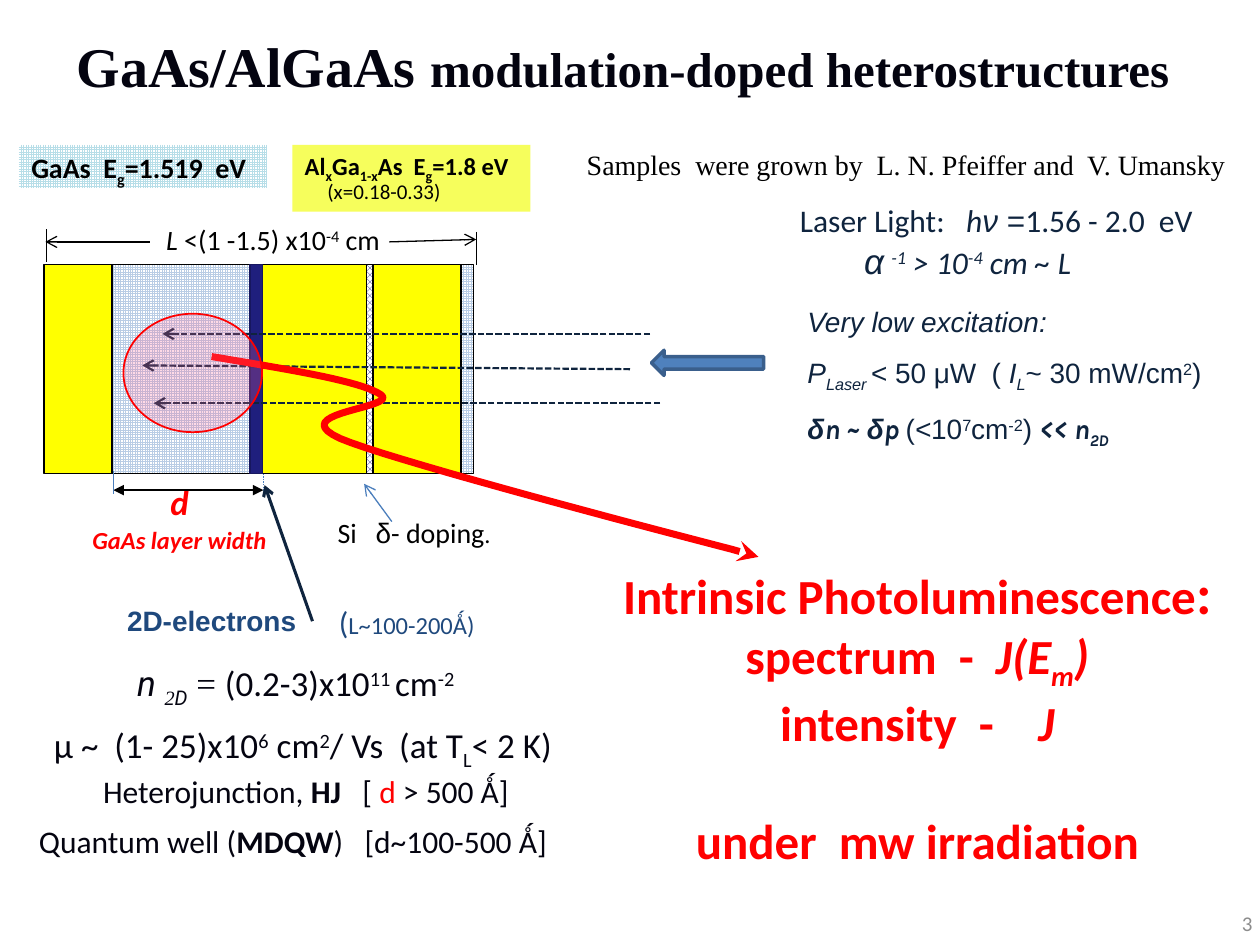
"""Build the slide on GaAs/AlGaAs modulation-doped heterostructures."""
from dataclasses import dataclass
from typing import Optional

import lxml.etree
import pptx
import pptx.dml.color
import pptx.enum.dml
import pptx.enum.shapes
import pptx.enum.text
import pptx.oxml.ns
import pptx.util

Inches, Pt = pptx.util.Inches, pptx.util.Pt
Shape = pptx.enum.shapes.MSO_SHAPE
Pattern = pptx.enum.dml.MSO_PATTERN
Dash = pptx.enum.dml.MSO_LINE
Align = pptx.enum.text.PP_ALIGN
Anchor = pptx.enum.text.MSO_ANCHOR
qn = pptx.oxml.ns.qn

COLORS = {
    "black": "000000", "ink": "040410", "white": "FFFFFF", "navy": "0F243E",
    "blue": "1F497D", "red": "FF0000", "grey": "8C8C8C", "yellow": "FFFF00",
    "lemon": "F6FE5C", "aqua": "B7DEE8", "ice": "B9CDE5", "indigo": "1F1F7D",
    "edge": "17175F", "steel": "4B7EBC", "arrow": "4F81BD",
    "arrow edge": "3A5F8C", "pink": "FF6699",
}
PATTERNS = {
    "aqua grid": (Pattern.SMALL_GRID, "aqua"),
    "ice grid": (Pattern.SMALL_GRID, "ice"),
    "check": (Pattern.LARGE_CHECKER_BOARD, "indigo"),
}
SERIF = "Times New Roman"


@dataclass
class Run:
    text: str
    size: Optional[float] = None
    font: Optional[str] = None
    color: Optional[str] = None
    bold: Optional[bool] = None
    italic: Optional[bool] = None
    base: int = 0


@dataclass
class Para:
    runs: list[Run]
    indent: float = 0
    before: float = 0


@dataclass
class Label:
    x: float
    y: float
    w: float
    h: float
    paras: list[Para]
    size: float
    color: str = "black"
    font: str = "Calibri"
    bold: bool = False
    italic: bool = False
    align: Align = Align.LEFT
    spacing: float | pptx.util.Length = 1.0
    fill: Optional[str] = None
    wrap: bool = True
    anchor: Anchor = Anchor.TOP


@dataclass
class Block:
    x: float
    y: float
    w: float
    h: float
    fill: str
    line: str = "black"
    width: float = 0.75
    kind: Shape = Shape.RECTANGLE
    alpha: Optional[int] = None


@dataclass
class Line:
    start: tuple[float, float]
    end: tuple[float, float]
    color: str = "black"
    width: float = 0.75
    dash: Optional[Dash] = None
    head: Optional[str] = None
    tail: Optional[str] = None


def rgb(name: str) -> pptx.dml.color.RGBColor:
    """Return the named colour."""
    return pptx.dml.color.RGBColor.from_string(COLORS[name])


def sup(text: str, **style) -> Run:
    """Return a superscript run."""
    return Run(text, base=30, **style)


def sub(text: str, **style) -> Run:
    """Return a subscript run."""
    return Run(text, base=-25, **style)


def paint(s, fill: str) -> None:
    """Fill a shape with a plain colour or a pattern."""
    if fill in PATTERNS:
        pattern, fore = PATTERNS[fill]
        s.fill.patterned()
        s.fill.pattern = pattern
        s.fill.fore_color.rgb, s.fill.back_color.rgb = rgb(fore), rgb("white")
    else:
        s.fill.solid()
        s.fill.fore_color.rgb = rgb(fill)


def stroke(s, color: str, width: float, dash=None, head=None, tail=None) -> None:
    """Set colour, width, dash and arrowheads of an outline."""
    s.line.color.rgb, s.line.width = rgb(color), Pt(width)
    if dash:
        s.line.dash_style = dash
    ln = s._element.spPr.find(qn("a:ln"))
    for tag, kind in (("a:headEnd", head), ("a:tailEnd", tail)):
        if kind:
            lxml.etree.SubElement(ln, qn(tag), type=kind)


def set_font(font, label: Label, run: Run) -> None:
    """Apply the label's style with the run's exceptions."""
    def pick(name: str):
        value = getattr(run, name)
        return getattr(label, name) if value is None else value
    font.name, font.size = pick("font"), Pt(pick("size"))
    font.bold, font.italic = pick("bold"), pick("italic")
    font.color.rgb = rgb(pick("color"))


def draw_label(shapes, label: Label) -> None:
    """Add a text box with its paragraphs."""
    s = shapes.add_textbox(*map(Inches, (label.x, label.y, label.w, label.h)))
    if label.fill:
        paint(s, label.fill)
    tf = s.text_frame
    tf.word_wrap, tf.vertical_anchor = label.wrap, label.anchor
    for i, para in enumerate(label.paras):
        p = tf.add_paragraph() if i else tf.paragraphs[0]
        p.alignment, p.line_spacing = label.align, label.spacing
        p.space_before = Pt(para.before)
        p._p.get_or_add_pPr().set("marL", str(Inches(para.indent)))
        set_font(p.font, label, Run(""))
        for run in para.runs:
            r = p.add_run()
            r.text = run.text
            set_font(r.font, label, run)
            if run.base:
                r._r.get_or_add_rPr().set("baseline", str(run.base * 1000))


def draw_block(shapes, b: Block) -> None:
    """Add a filled preset shape."""
    s = shapes.add_shape(b.kind, *map(Inches, (b.x, b.y, b.w, b.h)))
    s.shadow.inherit = False
    paint(s, b.fill)
    stroke(s, b.line, b.width)
    if b.alpha:
        clr = s._element.spPr.find(qn("a:solidFill"))[0]
        lxml.etree.SubElement(clr, qn("a:alpha"), val=str(b.alpha * 1000))


def draw_line(shapes, line: Line) -> None:
    """Add a straight connector."""
    s = shapes.add_connector(pptx.enum.shapes.MSO_CONNECTOR.STRAIGHT,
                             *map(Inches, line.start + line.end))
    stroke(s, line.color, line.width, line.dash, line.head, line.tail)
    lxml.etree.SubElement(s._element.spPr, qn("a:effectLst"))


def draw_emission(shapes, knots: list[tuple[float, float]], tip: tuple[float, float]) -> None:
    """Draw the emitted light along cubic curves to an arrow tip."""
    steps, points = 20, []
    for i in range(0, len(knots) - 1, 3):
        for t in (n / steps for n in range(1, steps + 1)):
            weights = ((1 - t) ** 3, 3 * t * (1 - t) ** 2, 3 * t * t * (1 - t), t ** 3)
            points.append(tuple(Inches(sum(w * k[axis] for w, k in zip(weights, knots[i:i + 4])))
                                for axis in (0, 1)))
    builder = shapes.build_freeform(*map(Inches, knots[0]))
    builder.add_line_segments(points + [tuple(map(Inches, tip))], close=False)
    s = builder.convert_to_shape()
    s.shadow.inherit = False
    s.fill.background()
    stroke(s, "red", 4, tail="stealth")


TOP, DEPTH = 2.1, 1.66
LAYERS = [Block(x, TOP, w, DEPTH, fill, line) for x, w, fill, line in (
    (0.88, 1.22, "ice grid", "black"), (3.66, 0.1, "ice grid", "black"),
    (2.08, 1.58, "yellow", "black"), (2.91, 0.05, "check", "black"),
    (0.35, 0.54, "yellow", "black"), (1.985, 0.1, "indigo", "edge"))]
LABELS = [
    Label(0.51, 0.26, 8.98, 0.59, [Para([Run("GaAs/AlGaAs ", 32), Run("modulation-doped heterostructures")])],
          28, "ink", SERIF, True, spacing=0.9),
    Label(0.2, 5.09, 4.49, 1, [
        Para([Run("n ", font="Roboto", italic=True), sub("2", font=SERIF, italic=True),
              sub("D", font="Roboto", italic=True), Run(" = ", font=SERIF),
              Run("(0.2-3)x10"), sup("11 "), Run("cm"), sup("-2")], 0.79),
        Para([Run("μ ~  (1- 25)x10"), sup("6"), Run(" cm"), sup("2"), Run("/ Vs  (at T"),
              sub("L"), Run("< 2 K)")], 0.13)], 20, "ink", spacing=1.3),
    Label(0.04, 6.11, 4.46, 0.83, [
        Para([Run("Heterojunction, "), Run("HJ", bold=True), Run("   [ "), Run("d", color="red"),
              Run(" > 500 Ǻ]")], 0.68),
        Para([Run("Quantum well ("), Run("MDQW", bold=True), Run(")   [d~100-500 Ǻ]")], 0.17, 9)],
          18, "ink", spacing=0.9),
    Label(0.15, 1.15, 1.97, 0.34, [Para([Run("GaAs  E"), sub("g"), Run("=1.519  eV")])],
          16, bold=True, spacing=0.9, fill="aqua grid"),
    Label(2.32, 1.15, 1.89, 0.53, [
        Para([Run("Al"), sub("x"), Run("Ga"), sub("1-x"), Run("As  E"), sub("g"), Run("=1.8 eV")]),
        Para([Run("(x=0.18-0.33)", 12, bold=False)], 0.18)], 14, bold=True, spacing=0.9, fill="lemon"),
    Label(2.54, 4.07, 1.59, 0.34, [Para([Run("Si   "), Run("δ", font="Arial"), Run("- doping"),
                                         Run(".", 14)], 0.04)], 16, spacing=0.9),
    Label(0.91, 4.77, 1.65, 0.34, [Para([Run("2D-electrons")])], 16, "blue", "Arial", True, spacing=0.9),
    Label(2.59, 4.77, 1.29, 0.37, [Para([Run("(", 18), Run("L~100-200Ǻ)")])], 14, "blue", spacing=0.9),
    Label(0.55, 3.96, 1.75, 0.37, [Para([Run("d", 20)]), Para([Run("GaAs layer width")], before=8)],
          14, "red", bold=True, italic=True, align=Align.CENTER, spacing=Pt(10)),
    Label(4.37, 1.12, 5.64, 0.37, [Para([Run("Samples  were grown by  L. N. Pfeiffer and  V. Umansky")])],
          16, font=SERIF, align=Align.CENTER, anchor=Anchor.MIDDLE),
    Label(7.71, 7.13, 2.33, 0.4, [Para([Run("3")])], 12, "grey", align=Align.RIGHT, anchor=Anchor.MIDDLE),
    Label(1.22, 1.72, 1.98, 0.37, [Para([Run("L", italic=True), Run(" <(1 -1.5) x10"), sup("-4"),
                                         Run(" cm")])], 16, wrap=False),
    Label(4.82, 4.38, 4.92, 2.52, [
        Para([Run("Intrinsic Photoluminescence"), Run(":", 32)]),
        Para([Run("spectrum  -  "), Run("J(E", italic=True), sub("m", italic=True), Run(")", italic=True)]),
        Para([Run("intensity  -    "), Run("J", italic=True)]),
        Para([Run("under  mw irradiation")], before=34)], 28, "red", bold=True, align=Align.CENTER, wrap=False),
    Label(6.25, 1.55, 3.52, 0.74, [
        Para([Run("Laser Light:   "), Run("h", italic=True), Run("ν", font="Arial", italic=True),
              Run(" =", font="Arial"), Run("1.56 - 2.0  eV")]),
        Para([Run(t, italic=True, **style) for t, style in (
            ("α", {"size": 20, "font": "Arial"}), (" ", {}), ("-1", {"base": 30}), (" > 10", {}),
            ("-4", {"base": 30}), (" cm ~ L", {}))], 0.51)], 18, "navy", wrap=False),
    Label(6.31, 2.34, 3.58, 1.69, [
        Para([Run("Very low excitation:", italic=True)]),
        Para([Run("P", italic=True), sub("Laser ", italic=True), Run("< 50 μW  ( "), Run("I", italic=True),
              sub("L", italic=True), Run("~ 30 mW/cm"), sup("2"), Run(")")], before=8),
        Para([Run(t, font=f, bold=True, italic=True) for t, f in (
            ("δ", "Arial"), ("n ~ ", "Karla"), ("δ", "Arial"), ("p ", "Karla"))]
             + [Run("("), Run("<", italic=True), Run("10"), sup("7"), Run("cm"), sup("-2"), Run(") "),
                Run("<< n", font="Karla", bold=True, italic=True),
                sub("2D", font="Karla", bold=True, italic=True)], before=8)], 16, "navy", "Arial", spacing=1.1),
]
LINES = [
    Line((2.09, 3.89), (0.9, 3.89), head="triangle", tail="triangle"),
    Line((2.09, 3.76), (2.09, 3.94), "steel", dash=Dash.ROUND_DOT),
    Line((0.9, 3.74), (0.9, 3.92), "steel"),
    Line((2.48, 4.93), (2.1, 3.85), "navy", 1.75, tail="arrow"),
    Line((0.37, 1.82), (0.37, 2.08)),
    Line((3.78, 1.84), (3.78, 2.1)),
    Line((3.09, 1.92), (3.78, 1.9), tail="arrow"),
    Line((1.19, 1.92), (0.36, 1.92), tail="arrow"),
    Line((3.11, 4.14), (2.89, 3.84), "steel", tail="arrow"),
] + [Line(a, b, "navy", 1.25, Dash.SQUARE_DOT, tail="arrow") for a, b in (
    ((5.16, 2.65), (1.29, 2.65)), ((5.24, 3.2), (1.22, 3.2)), ((5, 2.93), (1.13, 2.9)))]
EMISSION = [(1.68, 2.83), (2.27, 2.93), (2.85, 3.02), (3.02, 3.13), (3.19, 3.24),
            (2.24, 3.27), (2.7, 3.48), (3.17, 3.68), (5.81, 4.36), (5.81, 4.36)]


def main() -> None:
    """Build and save the slide."""
    prs = pptx.Presentation()
    prs.slide_width, prs.slide_height = Inches(10), Inches(7.5)
    shapes = prs.slides.add_slide(prs.slide_layouts[6]).shapes
    for draw, items in ((draw_block, LAYERS), (draw_label, LABELS), (draw_line, LINES)):
        for item in items:
            draw(shapes, item)
    draw_block(shapes, Block(5.17, 2.78, 0.89, 0.2, "arrow", "arrow edge", 2, Shape.LEFT_ARROW))
    draw_emission(shapes, EMISSION, (6.02, 4.42))
    draw_block(shapes, Block(0.98, 2.49, 1.1, 0.94, "pink", "red", 1, Shape.OVAL, 24))
    prs.save("out.pptx")


if __name__ == "__main__":
    main()
